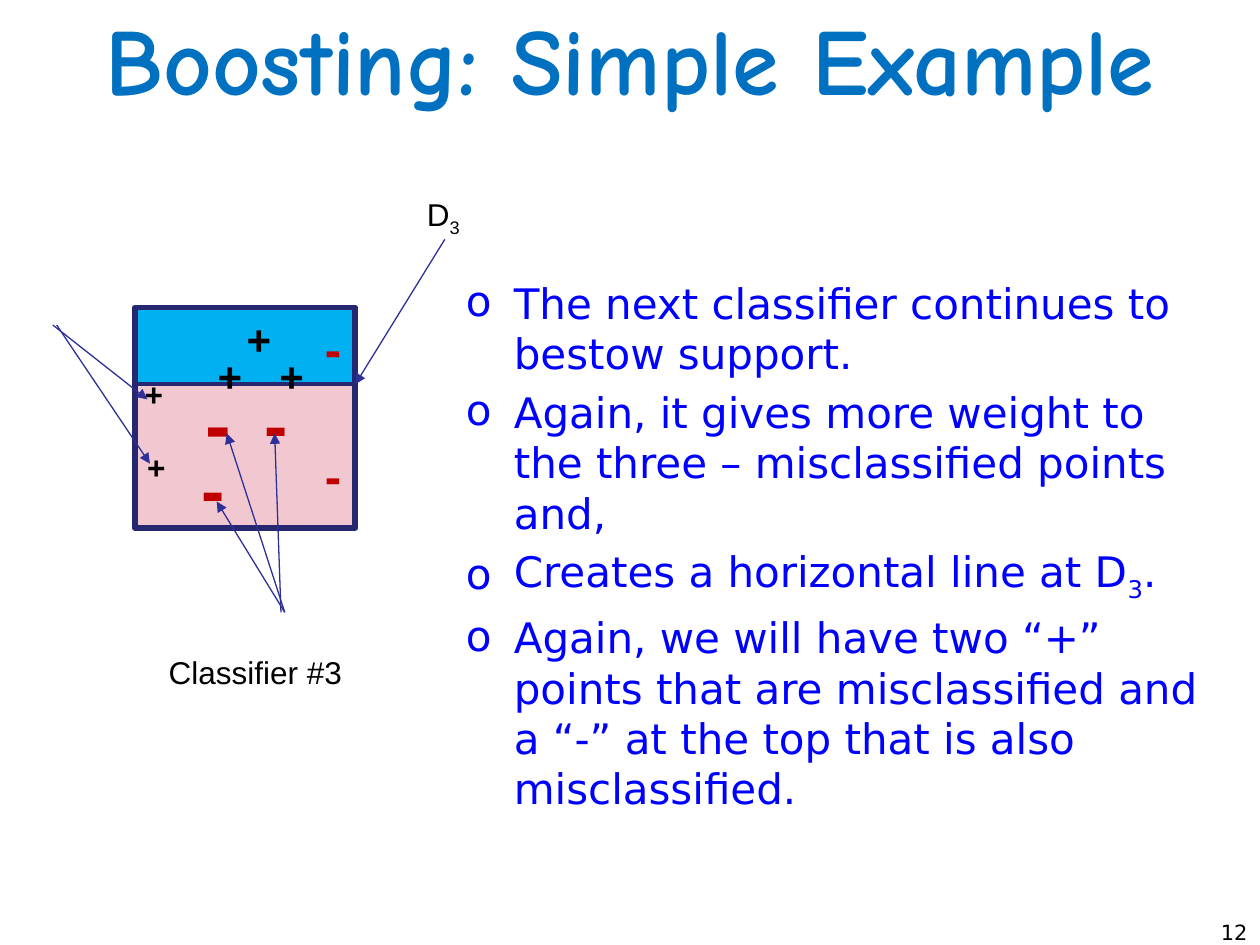
from typing import NamedTuple

from lxml import etree
from pptx import Presentation
from pptx.dml.color import RGBColor
from pptx.enum.shapes import MSO_CONNECTOR, MSO_SHAPE
from pptx.enum.text import MSO_ANCHOR, PP_ALIGN
from pptx.oxml.ns import qn
from pptx.util import Inches, Pt

RECTANGLE = MSO_SHAPE.RECTANGLE
STRAIGHT = MSO_CONNECTOR.STRAIGHT
LEFT, CENTER, RIGHT = PP_ALIGN.LEFT, PP_ALIGN.CENTER, PP_ALIGN.RIGHT
TOP, MIDDLE = MSO_ANCHOR.TOP, MSO_ANCHOR.MIDDLE

BLACK = RGBColor(0x00, 0x00, 0x00)
RED = RGBColor(0xC0, 0x00, 0x00)
TITLE_BLUE = RGBColor(0x00, 0x70, 0xC0)
BODY_BLUE = RGBColor(0x00, 0x00, 0xFF)
SKY = RGBColor(0x00, 0xB0, 0xF0)
PINK = RGBColor(0xF2, 0xC8, 0xD0)
NAVY = RGBColor(0x26, 0x26, 0x71)
ARROW_BLUE = RGBColor(0x2F, 0x2F, 0x98)

SUBSCRIPT = "-25000"
BULLET_INDENT = Inches(0.38)


class Box(NamedTuple):
    left: float
    top: float
    width: float
    height: float


class Region(NamedTuple):
    box: Box
    fill: RGBColor | None
    line_width: float


class Mark(NamedTuple):
    """A plus or minus data point."""
    sign: str
    box: Box
    size: int


class Arrow(NamedTuple):
    start: tuple[float, float]
    end: tuple[float, float]


REGIONS = [
    Region(Box(1.07, 3.05, 1.74, 1.14), PINK, 2),
    Region(Box(1.07, 2.44, 1.75, 0.61), SKY, 2),
    Region(Box(1.07, 2.44, 1.75, 1.75), None, 3.25),
]
MARKS = [
    Mark("+", Box(2.12, 2.73, 0.4, 0.5), 24),
    Mark("+", Box(1.86, 2.44, 0.4, 0.5), 24),
    Mark("+", Box(1.63, 2.73, 0.4, 0.5), 24),
    Mark("+", Box(1.07, 3.51, 0.35, 0.4), 18),
    Mark("+", Box(1.05, 2.93, 0.35, 0.4), 18),
    Mark("-", Box(2, 2.97, 0.39, 0.77), 40),
    Mark("-", Box(1.5, 3.49, 0.39, 0.77), 40),
    Mark("-", Box(1.53, 2.93, 0.41, 0.84), 44),
    Mark("-", Box(2.48, 2.48, 0.33, 0.57), 28),
    Mark("-", Box(2.48, 3.49, 0.33, 0.57), 28),
]
MARK_COLORS = {"+": BLACK, "-": RED}
ARROWS = [
    Arrow((2.26, 4.86), (1.8, 3.44)),
    Arrow((2.26, 4.86), (1.72, 3.98)),
    Arrow((2.23, 4.86), (2.18, 3.44)),
    Arrow((3.53, 1.9), (2.82, 3.05)),
    Arrow((0.42, 2.58), (1.17, 3.17)),
    Arrow((0.45, 2.58), (1.19, 3.68)),
]
# Within a paragraph, every second piece between underscores is a subscript.
POINTS = [
    "The next classifier continues to bestow support.",
    "Again, it gives more weight to the three – misclassified points and,",
    "Creates a horizontal line at D_3_.",
    "Again, we will have two “+” points that are misclassified and a “-” "
    "at the top that is also misclassified.",
]


def add_bullet(para) -> None:
    properties = para._p.get_or_add_pPr()
    properties.set("marL", str(BULLET_INDENT))
    properties.set("indent", str(-BULLET_INDENT))
    para.space_before = Pt(4.8)
    etree.SubElement(properties, qn("a:buFont")).set("typeface", "DejaVu Sans")
    etree.SubElement(properties, qn("a:buChar")).set("char", "o")


def add_text(page, box: Box, *paragraphs: str, size: int, color: RGBColor = BLACK,
             font: str = "Arial", bold: bool = False, align: PP_ALIGN = LEFT,
             anchor: MSO_ANCHOR = TOP, wrap: bool = False, bullets: bool = False):
    frame = page.shapes.add_textbox(*map(Inches, box)).text_frame
    frame.word_wrap = wrap
    frame.vertical_anchor = anchor
    for index, text in enumerate(paragraphs):
        para = frame.paragraphs[0] if index == 0 else frame.add_paragraph()
        para.alignment = align
        if bullets:
            add_bullet(para)
        for position, piece in enumerate(text.split("_")):
            if not piece:
                continue
            span = para.add_run()
            span.text = piece
            span.font.size = Pt(size)
            span.font.name = font
            span.font.bold = bold
            span.font.color.rgb = color
            if position % 2:
                span.font._element.set("baseline", SUBSCRIPT)


def add_region(page, region: Region) -> None:
    shape = page.shapes.add_shape(RECTANGLE, *map(Inches, region.box))
    shape.shadow.inherit = False
    if region.fill is None:
        shape.fill.background()
    else:
        shape.fill.solid()
        shape.fill.fore_color.rgb = region.fill
    shape.line.color.rgb = NAVY
    shape.line.width = Pt(region.line_width)


def add_arrow(page, arrow: Arrow) -> None:
    connector = page.shapes.add_connector(
        STRAIGHT, *map(Inches, arrow.start + arrow.end))
    connector.line.color.rgb = ARROW_BLUE
    connector.line.width = Pt(0.75)
    etree.SubElement(connector.line._get_or_add_ln(),
                     qn("a:tailEnd")).set("type", "triangle")
    etree.SubElement(connector._element.spPr, qn("a:effectLst"))


def main() -> None:
    deck = Presentation()
    deck.slide_width, deck.slide_height = Inches(10), Inches(7.5)
    page = deck.slides.add_slide(deck.slide_layouts[6])

    add_text(page, Box(0, 0, 10, 0.92), "Boosting: Simple Example", size=54,
             color=TITLE_BLUE, font="Comic Neue", bold=True, align=CENTER,
             anchor=MIDDLE, wrap=True)
    add_text(page, Box(9.38, 7.25, 0.62, 0.25), "12", size=12,
             font="DejaVu Sans", align=RIGHT, wrap=True)
    for region in REGIONS:
        add_region(page, region)
    for mark in MARKS:
        add_text(page, mark.box, mark.sign, size=mark.size,
                 color=MARK_COLORS[mark.sign], bold=True)
    add_text(page, Box(3.6, 2.15, 6.06, 4.51), *POINTS, size=24,
             color=BODY_BLUE, font="DejaVu Sans", wrap=True, bullets=True)
    add_text(page, Box(3.29, 1.5, 0.48, 0.4), "D_3_", size=18)
    for arrow in ARROWS:
        add_arrow(page, arrow)
    add_text(page, Box(1.24, 5.13, 1.59, 0.4), "Classifier #3", size=18)

    deck.save("out.pptx")


if __name__ == "__main__":
    main()
